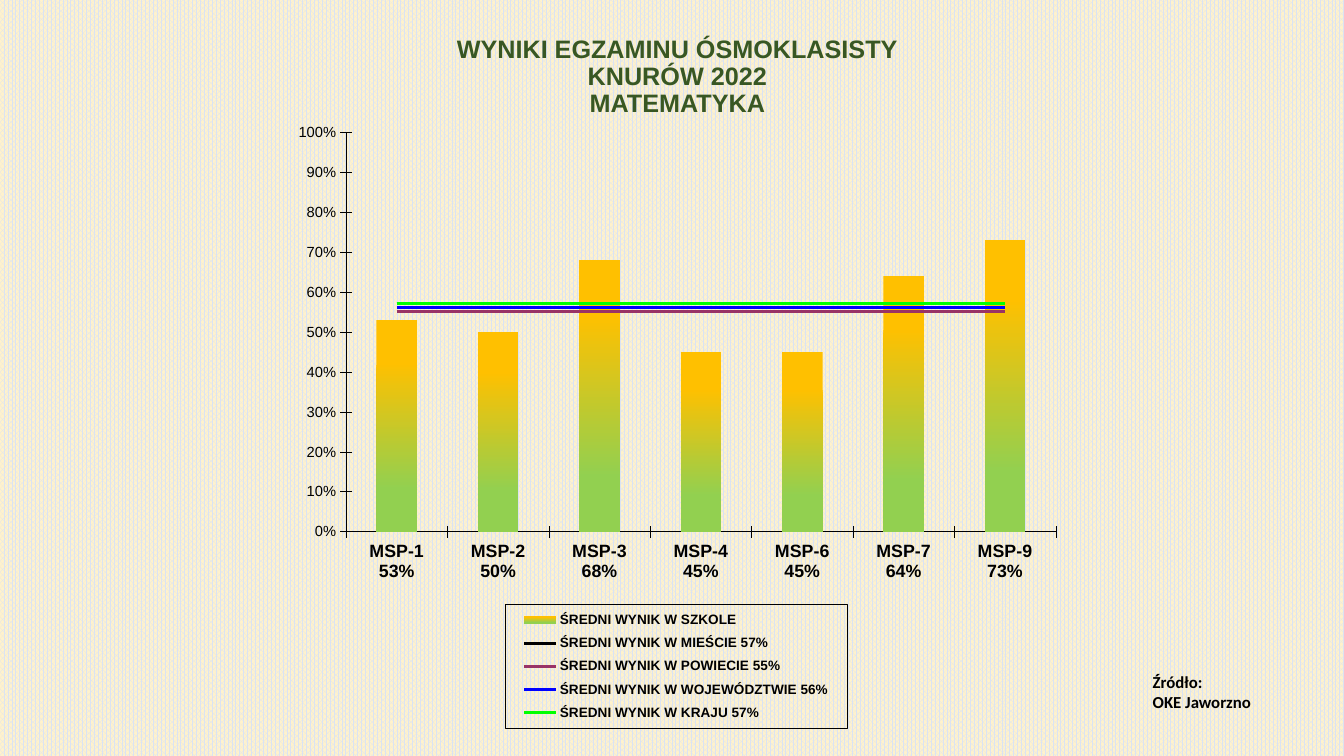
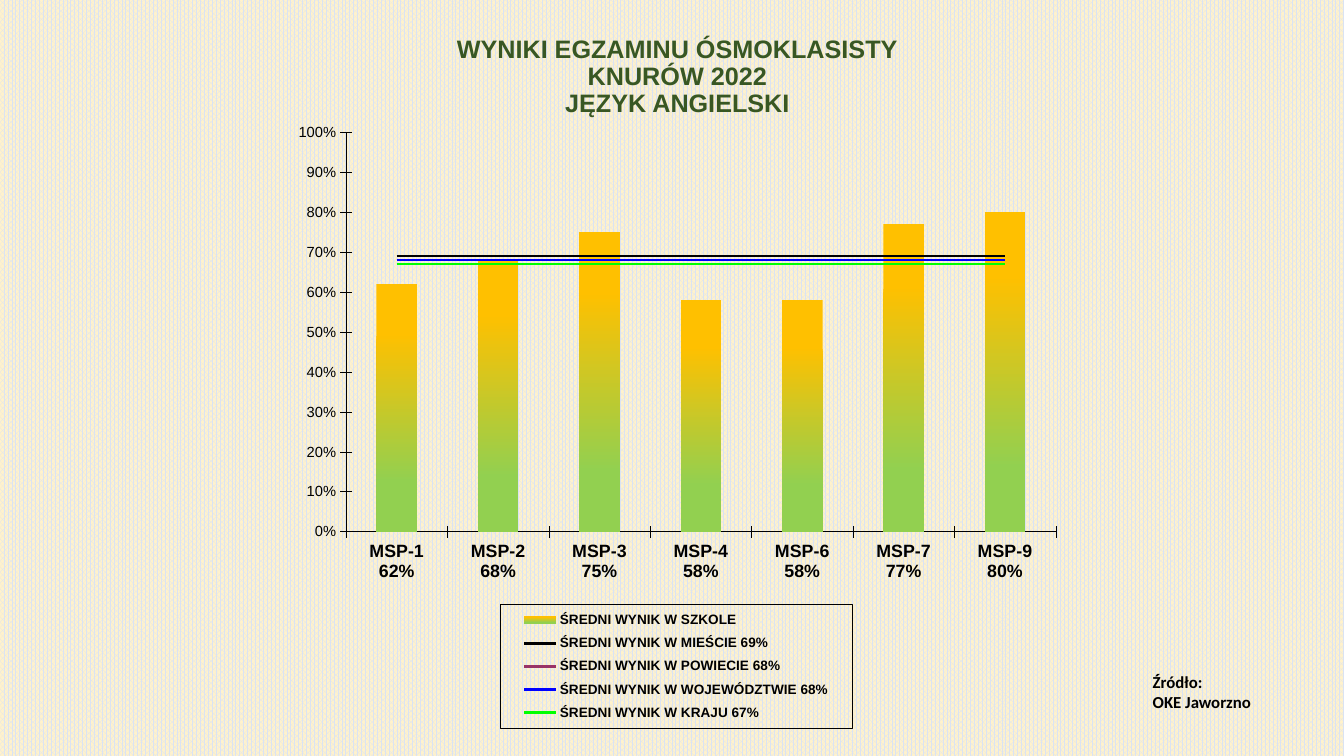
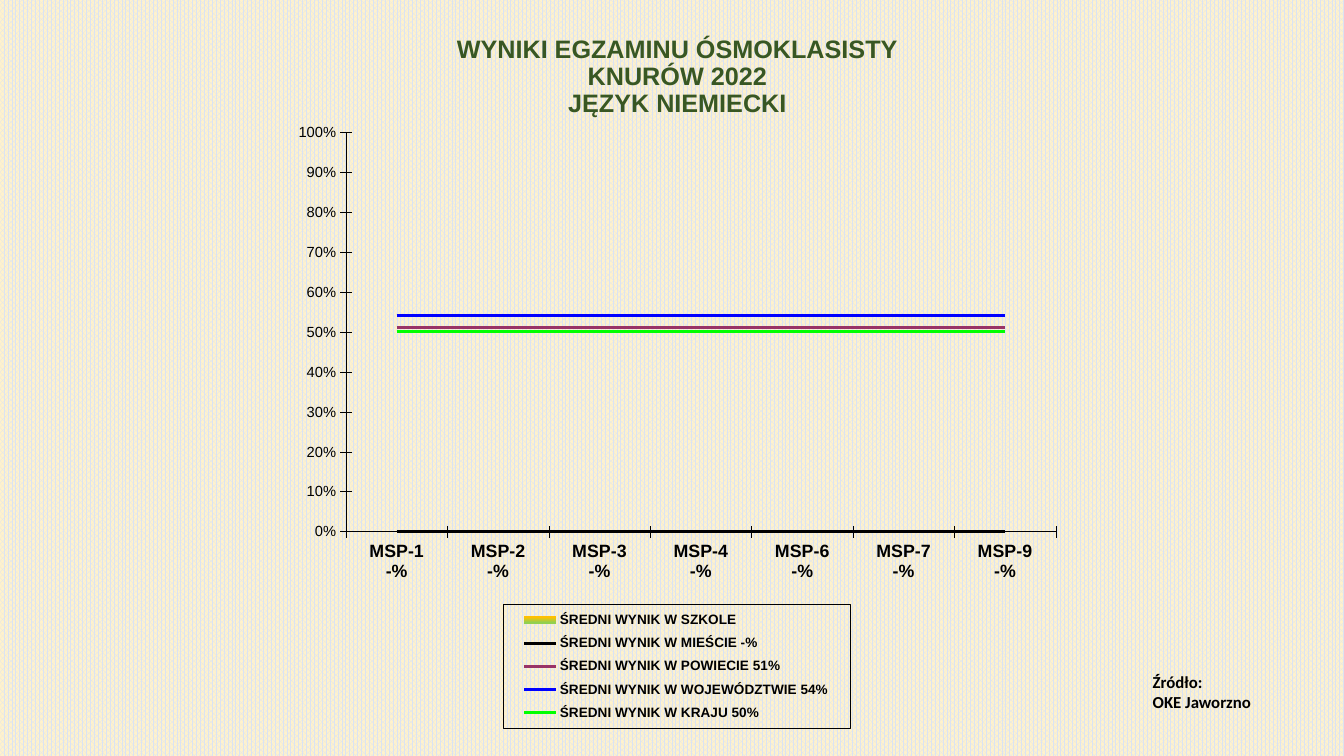
import copy
import dataclasses

import pptx
import pptx.chart.data
import pptx.dml.color
import pptx.enum.chart
import pptx.enum.dml
import pptx.enum.text
import pptx.oxml
import pptx.oxml.ns
import pptx.util

Cm = pptx.util.Cm
Pt = pptx.util.Pt


@dataclasses.dataclass(frozen=True)
class Theme:
    heading_font: str = "Arial"
    note_font: str = "Calibri"
    title: str = "385723"
    ink: str = "000000"
    pattern_front: str = "DAE3F3"
    pattern_back: str = "FFF2CC"
    bar_top: str = "FFC000"
    bar_bottom: str = "92D050"
    averages: tuple = ("000000", "993366", "0000FF", "00FF00")
    title_size: float = 18
    note_size: float = 12
    axis_size: float = 10.5
    category_size: float = 12.7
    legend_size: float = 9.7
    hairline: float = 0.25
    average_line: float = 2.1


@dataclasses.dataclass(frozen=True)
class Subject:
    name: str
    schools: tuple
    averages: tuple
    legend_width: float


THEME = Theme()
SCHOOLS = ("MSP-1", "MSP-2", "MSP-3", "MSP-4", "MSP-6", "MSP-7", "MSP-9")
AREAS = ("MIEŚCIE", "POWIECIE", "WOJEWÓDZTWIE", "KRAJU")
LEGEND_CENTRE = 0.475
SUBJECTS = (
    Subject("MATEMATYKA", (53, 50, 68, 45, 45, 64, 73), (57, 55, 56, 57), 0.375),
    Subject("JĘZYK ANGIELSKI", (62, 68, 75, 58, 58, 77, 80), (69, 68, 68, 67), 0.387),
    Subject("JĘZYK NIEMIECKI", (None,) * 7, (None, 51, 54, 50), 0.381),
)


def rgb(value):
    return pptx.dml.color.RGBColor.from_string(value)


def style_font(font, size, color, name, bold=False):
    font.size = Pt(size)
    font.color.rgb = rgb(color)
    font.name = name
    font.bold = bold


def percent(score):
    return "-%" if score is None else f"{score}%"


def share(score):
    return (score or 0) / 100


def chart_xml(tag, content):
    namespaces = pptx.oxml.ns.nsdecls("c", "a")
    return pptx.oxml.parse_xml(f"<c:{tag} {namespaces}>{content}</c:{tag}>")


def manual_layout(left, top, width, height, inner=False):
    target = '<c:layoutTarget val="inner"/>' if inner else ""
    sides = (("x", left), ("y", top), ("w", width), ("h", height))
    modes = '<c:xMode val="edge"/><c:yMode val="edge"/>'
    values = "".join(f'<c:{side} val="{value:.3f}"/>' for side, value in sides)
    return chart_xml("layout", f"<c:manualLayout>{target}{modes}{values}</c:manualLayout>")


def remove_layout(element):
    for layout in element.xpath("c:layout"):
        element.remove(layout)


def set_background(page):
    fill = page.background.fill
    fill.patterned()
    fill.pattern = pptx.enum.dml.MSO_PATTERN.PERCENT_75
    fill.fore_color.rgb = rgb(THEME.pattern_front)
    fill.back_color.rgb = rgb(THEME.pattern_back)


def add_title(page, lines):
    box = page.shapes.title
    box.left, box.top, box.width, box.height = Cm(4.37), Cm(0.94), Cm(25.4), Cm(2.16)
    frame = box.text_frame
    frame.auto_size = pptx.enum.text.MSO_AUTO_SIZE.NONE
    frame.vertical_anchor = pptx.enum.text.MSO_ANCHOR.BOTTOM
    para = frame.paragraphs[0]
    para.alignment = pptx.enum.text.PP_ALIGN.CENTER
    para.line_spacing = 0.9
    for index, line in enumerate(lines):
        if index:
            para.add_line_break()
        span = para.add_run()
        span.text = line
        style_font(span.font, THEME.title_size, THEME.title, THEME.heading_font, True)


def add_source(page, lines):
    box = page.shapes.add_textbox(Cm(28.8), Cm(16.81), Cm(4.72), Cm(1.27))
    frame = box.text_frame
    frame.word_wrap = True
    for index, line in enumerate(lines):
        para = frame.add_paragraph() if index else frame.paragraphs[0]
        span = para.add_run()
        span.text = line
        style_font(span.font, THEME.note_size, THEME.ink, THEME.note_font, True)


def result_data(subject):
    data = pptx.chart.data.CategoryChartData(number_format="0%")
    data.categories = [
        f"{school}\n{percent(score)}" for school, score in zip(SCHOOLS, subject.schools)
    ]
    data.add_series("ŚREDNI WYNIK W SZKOLE", [share(score) for score in subject.schools])
    for area, score in zip(AREAS, subject.averages):
        data.add_series(f"ŚREDNI WYNIK W {area} {percent(score)}", [share(score)] * len(SCHOOLS))
    return data


def move_averages_to_lines(chart):
    bars = chart.element.xpath("c:chart/c:plotArea/c:barChart")[0]
    lines = chart_xml("lineChart", '<c:grouping val="standard"/><c:varyColors val="0"/>')
    for series in bars.xpath("c:ser")[1:]:
        for flag in series.xpath("c:invertIfNegative"):
            series.remove(flag)
        lines.append(series)
    lines.append(chart_xml("marker", ""))
    for axis in bars.xpath("c:axId"):
        lines.append(copy.deepcopy(axis))
    bars.addnext(lines)


def style_bars(plot):
    plot.gap_width = 150
    plot.vary_by_categories = False
    fill = plot.series[0].format.fill
    fill.gradient()
    fill.gradient_angle = 270
    colors = ((0.2, THEME.bar_top), (0.8, THEME.bar_bottom))
    for stop, (position, color) in zip(fill.gradient_stops, colors):
        stop.position = position
        stop.color.rgb = rgb(color)


def style_lines(plot):
    for series, color in zip(plot.series, THEME.averages):
        series.smooth = False
        series.marker.style = pptx.enum.chart.XL_MARKER_STYLE.NONE
        series.format.line.color.rgb = rgb(color)
        series.format.line.width = Pt(THEME.average_line)


def style_axis(axis, size, bold):
    axis.has_major_gridlines = False
    axis.major_tick_mark = pptx.enum.chart.XL_TICK_MARK.CROSS
    axis.minor_tick_mark = pptx.enum.chart.XL_TICK_MARK.NONE
    axis.format.line.color.rgb = rgb(THEME.ink)
    axis.format.line.width = Pt(THEME.hairline)
    style_font(axis.tick_labels.font, size, THEME.ink, THEME.heading_font, bold)


def style_value_axis(axis):
    style_axis(axis, THEME.axis_size, False)
    axis.minimum_scale, axis.maximum_scale, axis.major_unit = 0, 1, 0.1
    axis.tick_labels.number_format = "0%"
    axis.tick_labels.number_format_is_linked = False


def add_legend(chart, width):
    chart.has_legend = True
    chart.legend.position = pptx.enum.chart.XL_LEGEND_POSITION.RIGHT
    chart.legend.include_in_layout = False
    style_font(chart.legend.font, THEME.legend_size, THEME.ink, THEME.heading_font, True)
    legend = chart.element.xpath("c:chart/c:legend")[0]
    remove_layout(legend)
    overlay = legend.xpath("c:overlay")[0]
    overlay.addprevious(manual_layout(LEGEND_CENTRE - width / 2, 0.778, width, 0.2))
    overlay.addnext(chart_xml(
        "spPr",
        f'<a:noFill/><a:ln w="{Pt(THEME.hairline)}"><a:solidFill>'
        f'<a:srgbClr val="{THEME.ink}"/></a:solidFill></a:ln>',
    ))


def add_result_chart(page, subject):
    chart = page.shapes.add_chart(
        pptx.enum.chart.XL_CHART_TYPE.COLUMN_CLUSTERED,
        Cm(6.15), Cm(3.12), Cm(22.96), Cm(15.57), result_data(subject),
    ).chart
    chart.has_title = False
    style_font(chart.font, THEME.axis_size, THEME.ink, THEME.heading_font)
    move_averages_to_lines(chart)
    bars, lines = chart.plots
    style_bars(bars)
    style_lines(lines)
    style_axis(chart.category_axis, THEME.category_size, True)
    style_value_axis(chart.value_axis)
    area = chart.element.xpath("c:chart/c:plotArea")[0]
    remove_layout(area)
    area.insert(0, manual_layout(0.112, 0.013, 0.779, 0.647, inner=True))
    add_legend(chart, subject.legend_width)


def main():
    deck = pptx.Presentation()
    deck.slide_width, deck.slide_height = Cm(33.87), Cm(19.05)
    set_background(deck.slide_master)
    layout = deck.slide_layouts.get_by_name("Title Only")
    for subject in SUBJECTS:
        page = deck.slides.add_slide(layout)
        add_title(page, ("WYNIKI EGZAMINU ÓSMOKLASISTY", "KNURÓW 2022", subject.name))
        add_result_chart(page, subject)
        add_source(page, ("Źródło:", "OKE Jaworzno"))
    deck.save("out.pptx")


if __name__ == "__main__":
    main()
